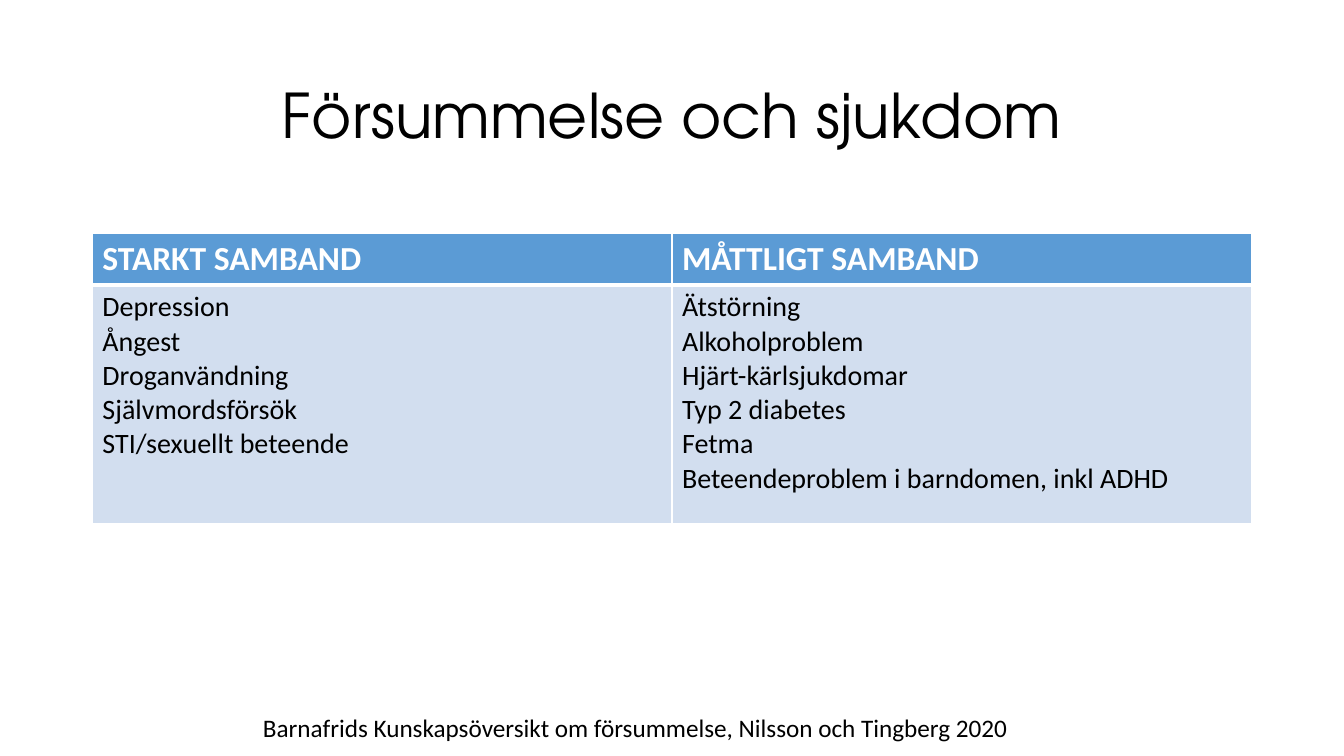
"""Build the slide on neglect and illness."""
from dataclasses import dataclass

from lxml.etree import SubElement
from pptx import Presentation
from pptx.dml.color import RGBColor as RGB
from pptx.enum.text import MSO_ANCHOR as Anchor, PP_ALIGN as Align
from pptx.oxml.ns import qn
from pptx.util import Pt

TITLE = "Försummelse och sjukdom"
ASSOCIATIONS = {
    "STARKT SAMBAND": [
        "Depression",
        "Ångest",
        "Droganvändning",
        "Självmordsförsök",
        "STI/sexuellt beteende",
    ],
    "MÅTTLIGT SAMBAND": [
        "Ätstörning",
        "Alkoholproblem",
        "Hjärt-kärlsjukdomar",
        "Typ 2 diabetes",
        "Fetma",
        "Beteendeproblem i barndomen, inkl ADHD",
    ],
}
CITATION = "Barnafrids Kunskapsöversikt om försummelse, Nilsson och Tingberg 2020"


@dataclass(frozen=True)
class Theme:
    """Colours, fonts and type sizes."""
    ink: str = "000000"
    paper: str = "FFFFFF"
    header: str = "5B9BD5"
    body: str = "D2DEEF"
    title_font: str = "TeX Gyre Adventor"
    text_font: str = "Calibri"
    title_size: int = 44
    header_size: int = 24
    body_size: int = 20
    citation_size: int = 18


THEME = Theme()
SLIDE_SIZE = (960, 540)
MARGIN = 66
CONTENT_WIDTH = SLIDE_SIZE[0] - 2 * MARGIN
TITLE_BOX = (MARGIN, 32.4, CONTENT_WIDTH, 104.4)
TABLE_TOP = 167
ROW_HEIGHTS = (36.6, 170.6)
CITATION_BOX = (180.7, 505.4, 612.7, 29)
THIN, THICK = 1, 3


def write(frame, lines, size, color, font=THEME.text_font, bold=False):
    """Write each line as one paragraph."""
    for index, line in enumerate(lines):
        paragraph = frame.add_paragraph() if index else frame.paragraphs[0]
        run = paragraph.add_run()
        run.text = line
        run.font.name, run.font.size, run.font.bold = font, Pt(size), bold
        run.font.color.rgb = RGB.from_string(color)


def add_text(slide, box, line, size, font):
    """Add a wrapping text box with one line."""
    frame = slide.shapes.add_textbox(*map(Pt, box)).text_frame
    frame.word_wrap = True
    write(frame, [line], size, THEME.ink, font)
    return frame


def style_cell(cell, fill, top, bottom):
    """Give a cell its white borders and its fill."""
    properties = cell._tc.get_or_add_tcPr()
    for side, width in zip("LRTB", (THIN, THIN, top, bottom)):
        border = SubElement(properties, qn(f"a:ln{side}"), w=str(Pt(width)))
        paint = SubElement(border, qn("a:solidFill"))
        SubElement(paint, qn("a:srgbClr"), val=THEME.paper)
    cell.fill.solid()
    cell.fill.fore_color.rgb = RGB.from_string(fill)


def add_associations(slide):
    """Add the table with one column per strength of association."""
    table = slide.shapes.add_table(
        len(ROW_HEIGHTS), len(ASSOCIATIONS), Pt(MARGIN), Pt(TABLE_TOP),
        Pt(CONTENT_WIDTH), Pt(sum(ROW_HEIGHTS))).table
    for row, height in zip(table.rows, ROW_HEIGHTS):
        row.height = Pt(height)
    for column, (strength, conditions) in enumerate(ASSOCIATIONS.items()):
        table.columns[column].width = Pt(CONTENT_WIDTH / len(ASSOCIATIONS))
        heading, listing = table.cell(0, column), table.cell(1, column)
        style_cell(heading, THEME.header, THIN, THICK)
        style_cell(listing, THEME.body, THICK, THIN)
        write(heading.text_frame, [strength], THEME.header_size, THEME.paper, bold=True)
        write(listing.text_frame, conditions, THEME.body_size, THEME.ink)


def main():
    """Build and save the slide."""
    deck = Presentation()
    deck.slide_width, deck.slide_height = map(Pt, SLIDE_SIZE)
    slide = deck.slides.add_slide(deck.slide_layouts[6])
    title = add_text(slide, TITLE_BOX, TITLE, THEME.title_size, THEME.title_font)
    title.vertical_anchor = Anchor.MIDDLE
    title.paragraphs[0].alignment = Align.CENTER
    title.paragraphs[0].line_spacing = 0.9
    add_associations(slide)
    add_text(slide, CITATION_BOX, CITATION, THEME.citation_size, THEME.text_font)
    deck.save("out.pptx")


if __name__ == "__main__":
    main()
